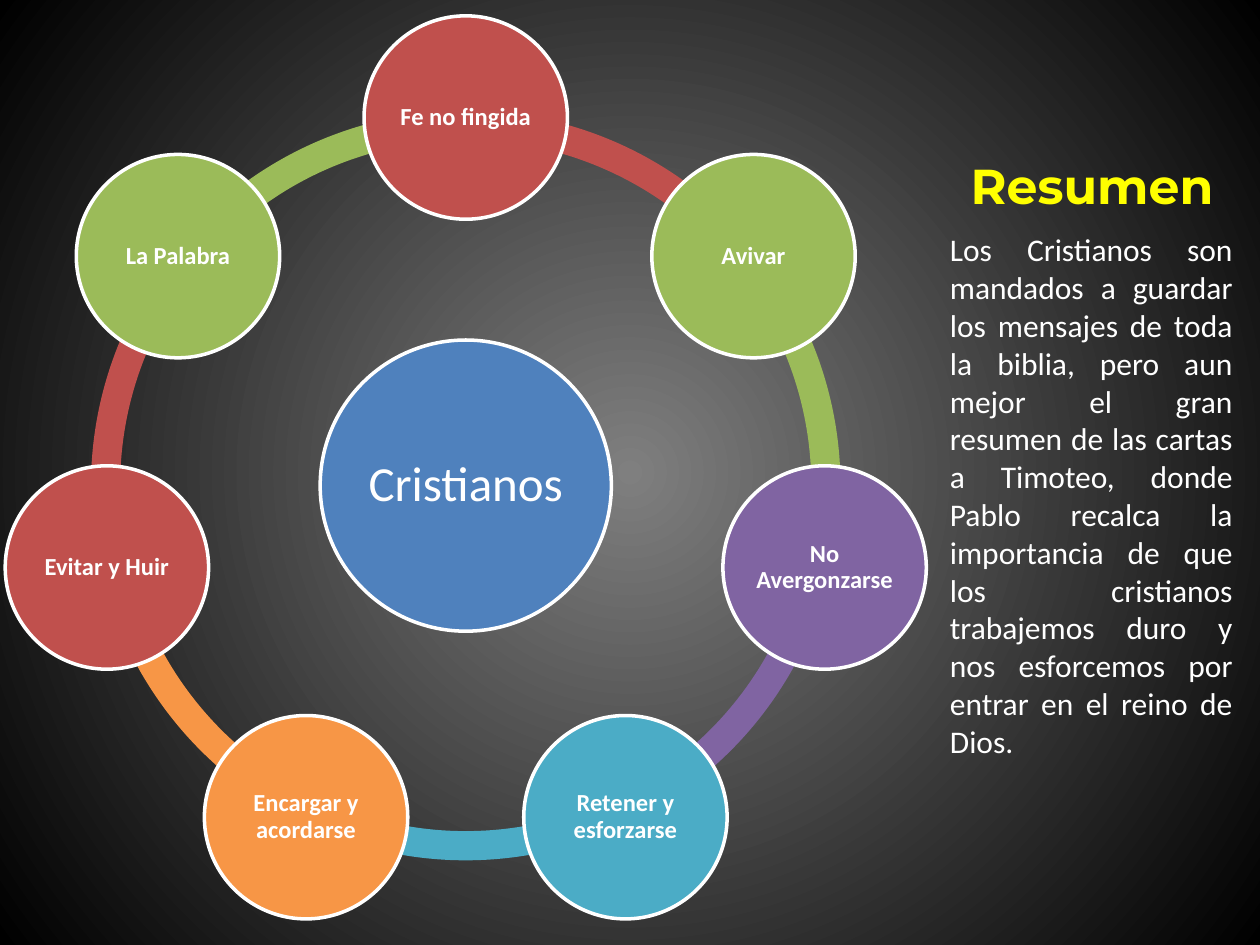
from dataclasses import dataclass
from math import cos, radians, sin

from lxml import etree
from pptx import Presentation
from pptx.dml.color import RGBColor
from pptx.enum.shapes import MSO_SHAPE
from pptx.enum.text import MSO_ANCHOR, PP_ALIGN
from pptx.oxml.ns import qn
from pptx.util import Cm, Pt

OVAL, BLOCK_ARC = MSO_SHAPE.OVAL, MSO_SHAPE.BLOCK_ARC
TOP, MIDDLE = MSO_ANCHOR.TOP, MSO_ANCHOR.MIDDLE
CENTER, RIGHT, JUSTIFY = PP_ALIGN.CENTER, PP_ALIGN.RIGHT, PP_ALIGN.JUSTIFY


@dataclass(frozen=True)
class Theme:
    body_font: str = "Calibri"
    title_font: str = "Montserrat"
    white: str = "FFFFFF"
    yellow: str = "FFFF00"
    glow: str = "7F7F7F"
    black: str = "000000"
    blue: str = "4F81BD"
    red: str = "C0504D"
    green: str = "9BBB59"
    purple: str = "8064A2"
    teal: str = "4BACC6"
    orange: str = "F79646"
    large: int = 28
    body: int = 18
    label: int = 14
    outline: int = 2


class SlideBuilder:
    def __init__(self, theme, slide):
        self.theme = theme
        self.slide = slide

    def radial_background(self, inner, outer):
        fill = self.slide.background.fill
        fill.gradient()
        for stop, color in zip(fill.gradient_stops, (inner, outer)):
            stop.color.rgb = RGBColor.from_string(color)
        gradient = self.slide.element.find(".//" + qn("a:gradFill"))
        gradient.remove(gradient.find(qn("a:lin")))
        circle = etree.SubElement(gradient, qn("a:path"), {"path": "circle"})
        etree.SubElement(circle, qn("a:fillToRect"),
                         {side: "50000" for side in "ltrb"})

    def round_shape(self, preset, x, y, diameter, color):
        shape = self.slide.shapes.add_shape(
            preset, Cm(x - diameter / 2), Cm(y - diameter / 2),
            Cm(diameter), Cm(diameter))
        shape.shadow.inherit = False
        shape.fill.solid()
        shape.fill.fore_color.rgb = RGBColor.from_string(color)
        return shape

    def arc(self, x, y, diameter, start, end, thickness, color):
        arc = self.round_shape(BLOCK_ARC, x, y, diameter, color)
        arc.line.fill.background()
        # Angles are stored in 60000ths of a degree, adjustments in 100000ths
        arc.adjustments[0] = start % 360 * 0.6
        arc.adjustments[1] = end % 360 * 0.6
        arc.adjustments[2] = thickness

    def circle(self, x, y, diameter, color, words, size, bold):
        circle = self.round_shape(OVAL, x, y, diameter, color)
        circle.line.color.rgb = RGBColor.from_string(self.theme.white)
        circle.line.width = Pt(self.theme.outline)
        frame = circle.text_frame
        frame.margin_left = frame.margin_right = Cm(0.05)
        frame.margin_top = frame.margin_bottom = Cm(0.05)
        self.set_text(frame, words, size, self.theme.white, CENTER, MIDDLE, bold)
        frame.paragraphs[0].line_spacing = 0.9

    def text(self, x, y, width, height, words, size, color, align,
             anchor=TOP, bold=False, font=None):
        box = self.slide.shapes.add_textbox(Cm(x), Cm(y), Cm(width), Cm(height))
        self.set_text(box.text_frame, words, size, color, align, anchor, bold,
                      font)

    def set_text(self, frame, words, size, color, align, anchor, bold,
                 font=None):
        frame.word_wrap = True
        frame.vertical_anchor = anchor
        paragraph = frame.paragraphs[0]
        paragraph.text = words
        paragraph.alignment = align
        paragraph.font.name = font or self.theme.body_font
        paragraph.font.size = Pt(size)
        paragraph.font.bold = bold
        paragraph.font.color.rgb = RGBColor.from_string(color)


def main():
    theme = Theme()
    deck = Presentation()
    deck.slide_width, deck.slide_height = Cm(25.4), Cm(19.05)
    builder = SlideBuilder(theme, deck.slides.add_slide(deck.slide_layouts[6]))
    builder.radial_background(theme.glow, theme.black)

    # Title
    builder.text(0.89, 2.13, 23.82, 3.18, "Resumen", theme.large, theme.yellow,
                 RIGHT, MIDDLE, True, theme.title_font)

    # Cycle: clockwise from the top, each arc in the colour of its first topic
    topics = [
        ("Fe no fingida", theme.red),
        ("Avivar", theme.green),
        ("No Avergonzarse", theme.purple),
        ("Retener y esforzarse", theme.teal),
        ("Encargar y acordarse", theme.orange),
        ("Evitar y Huir", theme.red),
        ("La Palabra", theme.green),
    ]
    center_x, center_y, orbit = 9.39, 9.79, 7.42
    step = 360 / len(topics)
    angles = [270 + step * i for i in range(len(topics))]

    # Ring
    for angle, (_, color) in zip(reversed(angles), reversed(topics)):
        builder.arc(center_x, center_y, 15.11, angle, angle + step, 0.039, color)

    # Hub and topics
    builder.circle(center_x, center_y, 5.87, theme.blue, "Cristianos",
                   theme.large, False)
    for angle, (topic, color) in zip(angles, topics):
        builder.circle(center_x + orbit * cos(radians(angle)),
                       center_y + orbit * sin(radians(angle)),
                       4.1, color, topic, theme.label, True)

    # Summary
    builder.text(
        18.9, 4.52, 6.2, 11.02,
        "Los Cristianos son mandados a guardar los mensajes de toda la biblia, "
        "pero aun mejor el gran resumen de las cartas a Timoteo, donde Pablo "
        "recalca la importancia de que los cristianos trabajemos duro y nos "
        "esforcemos por entrar en el reino de Dios.",
        theme.body, theme.white, JUSTIFY)

    deck.save("out.pptx")


if __name__ == "__main__":
    main()
